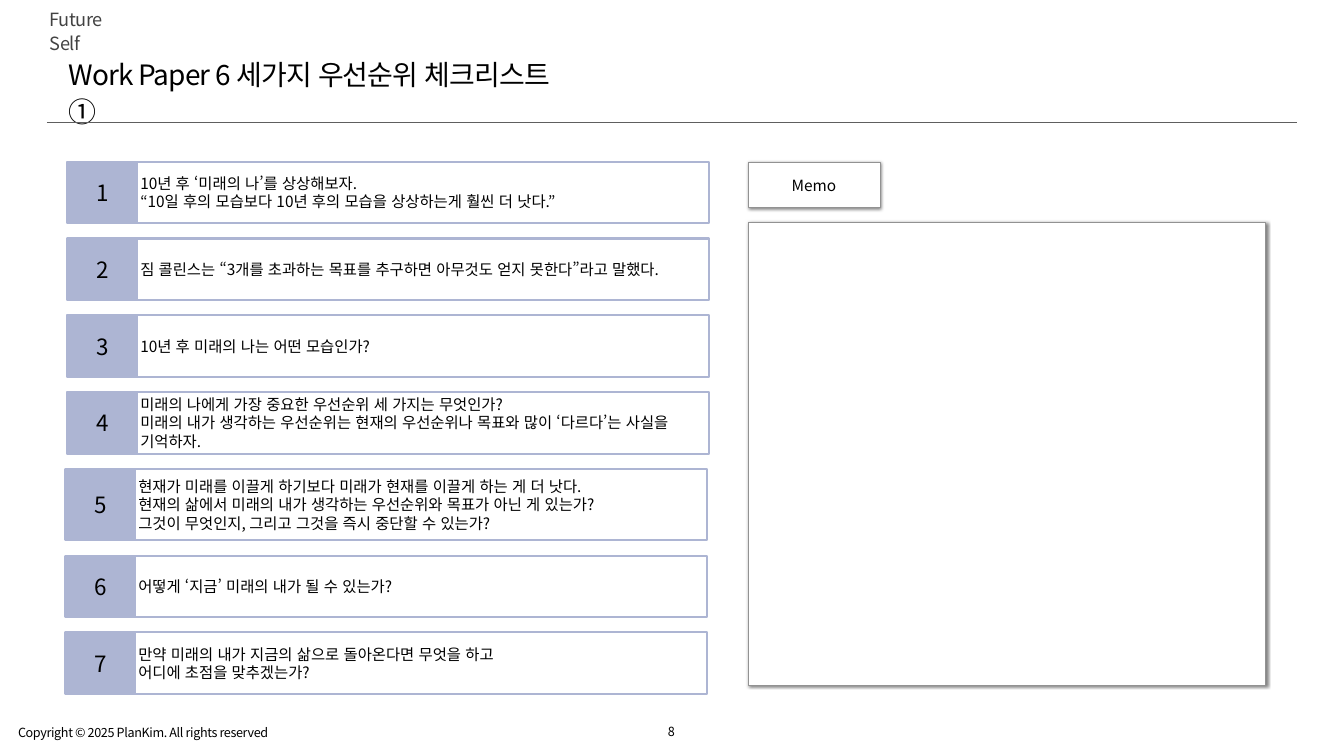
import pptx
import pptx.dml.color
import pptx.enum.shapes
import pptx.enum.text
import pptx.oxml
import pptx.oxml.ns
import pptx.util
from pptx.dml.color import RGBColor
from pptx.util import Cm

FONT = "Noto Sans CJK KR"
BLACK = RGBColor(0x00, 0x00, 0x00)
WHITE = RGBColor(0xFF, 0xFF, 0xFF)
GREY = RGBColor(0x42, 0x42, 0x42)
RULE = RGBColor(0x5E, 0x5E, 0x5E)
EDGE = RGBColor(0x92, 0x92, 0x92)
BLUE = RGBColor(0xAD, 0xB5, 0xD3)

RECT = pptx.enum.shapes.MSO_SHAPE.RECTANGLE
LEFT = pptx.enum.text.PP_ALIGN.LEFT
MID = pptx.enum.text.PP_ALIGN.CENTER
A_NS = 'xmlns:a="http://schemas.openxmlformats.org/drawingml/2006/main"'
SHADOW = (
    f'<a:effectLst {A_NS}><a:outerShdw blurRad="63500" dist="25400" '
    'dir="2700000" algn="tl" rotWithShape="0"><a:srgbClr val="000000">'
    '<a:alpha val="50000"/></a:srgbClr></a:outerShdw></a:effectLst>'
)

# Left edge, row height and paragraphs of each question
ITEMS = [
    (3.4, 3.1, ["10년 후 ‘미래의 나’를 상상해보자.\n"
                "“10일 후의 모습보다 10년 후의 모습을 상상하는게 훨씬 더 낫다.”"]),
    (3.4, 3.1, ["짐 콜린스는 “3개를 초과하는 목표를 추구하면 아무것도 얻지 못한다”라고 말했다."]),
    (3.4, 3.1, ["10년 후 미래의 나는 어떤 모습인가?"]),
    (3.4, 3.1, ["미래의 나에게 가장 중요한 우선순위 세 가지는 무엇인가?\n"
                "미래의 내가 생각하는 우선순위는 현재의 우선순위나 목표와 많이 ‘다르다’는 사실을 기억하자."]),
    (3.3, 3.6, ["현재가 미래를 이끌게 하기보다 미래가 현재를 이끌게 하는 게 더 낫다.",
                "현재의 삶에서 미래의 내가 생각하는 우선순위와 목표가 아닌 게 있는가?",
                "그것이 무엇인지, 그리고 그것을 즉시 중단할 수 있는가?"]),
    (3.3, 3.1, ["어떻게 ‘지금’ 미래의 내가 될 수 있는가?"]),
    (3.3, 3.1, ["만약 미래의 내가 지금의 삶으로 돌아온다면 무엇을 하고",
                "어디에 초점을 맞추겠는가?"]),
]
TOP, GAP = 8.15, 0.77
NUM_W, ASK_W = 3.52, 28.83


def write(shape, lines, size, color=BLACK, align=LEFT, space=None,
          track=0, inset=0.15):
    """Fill a shape with formatted paragraphs."""
    frame = shape.text_frame
    pad = Cm(inset)
    form = {
        "word_wrap": True,
        "auto_size": pptx.enum.text.MSO_AUTO_SIZE.NONE,
        "vertical_anchor": pptx.enum.text.MSO_ANCHOR.MIDDLE,
        "margin_left": pad, "margin_right": pad,
        "margin_top": pad, "margin_bottom": pad,
    }
    for key, value in form.items():
        setattr(frame, key, value)
    for i, line in enumerate(lines):
        para = frame.add_paragraph() if i else frame.paragraphs[0]
        para.text = line
        para.alignment = align
        if space:
            para.line_spacing = space
        for run in para.runs:
            for key, value in {"size": pptx.util.Pt(size), "name": FONT}.items():
                setattr(run.font, key, value)
            run.font.color.rgb = color
            props = run._r.get_or_add_rPr()
            props.set("lang", "ko-KR")
            if track:
                props.set("spc", str(round(track * 100)))
            # Hangul takes the East Asian typeface
            east = pptx.oxml.parse_xml(f'<a:ea {A_NS} typeface="{FONT}"/>')
            props.find(pptx.oxml.ns.qn("a:latin")).addnext(east)


def label(slide, box, text, size, **form):
    """Add a plain line of text."""
    shape = slide.shapes.add_textbox(*map(Cm, box))
    write(shape, [text], size, **form)


def panel(slide, box, fill, edge, width):
    """Add an outlined rectangle, unfilled when fill is None."""
    shape = slide.shapes.add_shape(RECT, *map(Cm, box))
    shape.shadow.inherit = False
    if fill is None:
        shape.fill.background()
    else:
        shape.fill.solid()
        shape.fill.fore_color.rgb = fill
    shape.line.color.rgb = edge
    shape.line.width = pptx.util.Pt(width)
    return shape


def card(slide, box):
    """Add a white panel with a soft shadow."""
    shape = panel(slide, box, WHITE, EDGE, 1)
    props = shape._element.spPr
    old = props.find(pptx.oxml.ns.qn("a:effectLst"))
    props.replace(old, pptx.oxml.parse_xml(SHADOW))
    return shape


def rule(slide, left, right, top):
    """Add the line under the heading."""
    line = slide.shapes.add_connector(
        pptx.enum.shapes.MSO_CONNECTOR.STRAIGHT,
        Cm(left), Cm(top), Cm(right), Cm(top))
    line.line.color.rgb = RULE
    line.line.width = pptx.util.Pt(1)
    line._element.spPr.append(pptx.oxml.parse_xml(f"<a:effectLst {A_NS}/>"))


def head(slide):
    """Place and format the title."""
    title = slide.shapes.title
    place = {"left": 3.3, "top": 3.58, "width": 26.11, "height": 1.98}
    for key, value in place.items():
        setattr(title, key, Cm(value))
    write(title, ["Work Paper 6 세가지 우선순위 체크리스트 ①"], 40,
          space=1.1, track=-1.2)


def rows(slide):
    """Stack the numbered questions."""
    top = TOP
    for num, (left, high, lines) in enumerate(ITEMS, 1):
        mark = panel(slide, (left, top, NUM_W, high), BLUE, BLUE, 3)
        write(mark, [str(num)], 32, align=MID)
        ask = panel(slide, (left + NUM_W, top, ASK_W, high), None, BLUE, 3)
        write(ask, lines, 22)
        top += high + GAP


def main():
    deck = pptx.Presentation()
    deck.slide_width, deck.slide_height = Cm(67.74), Cm(38.1)
    slide = deck.slides.add_slide(deck.slide_layouts[5])

    # Heading
    label(slide, (2.36, 0.81, 4.11, 1.37), "Future Self", 26,
          color=GREY, space=1.1, track=-0.8)
    rule(slide, 2.36, 65.38, 6.17)
    head(slide)

    # Checklist
    rows(slide)

    # Memo area
    memo = card(slide, (37.7, 8.18, 6.65, 2.29))
    write(memo, ["Memo"], 22, align=MID, inset=0.28)
    card(slide, (37.7, 11.2, 26.09, 23.32))

    # Footer
    label(slide, (0.76, 36.35, 15.39, 1.02),
          "Copyright © 2025 PlanKim. All rights reserved", 18,
          space=1.1, track=-0.5)
    label(slide, (33.5, 36.35, 0.69, 1.02), "8", 18, align=MID)

    deck.save("out.pptx")


if __name__ == "__main__":
    main()
